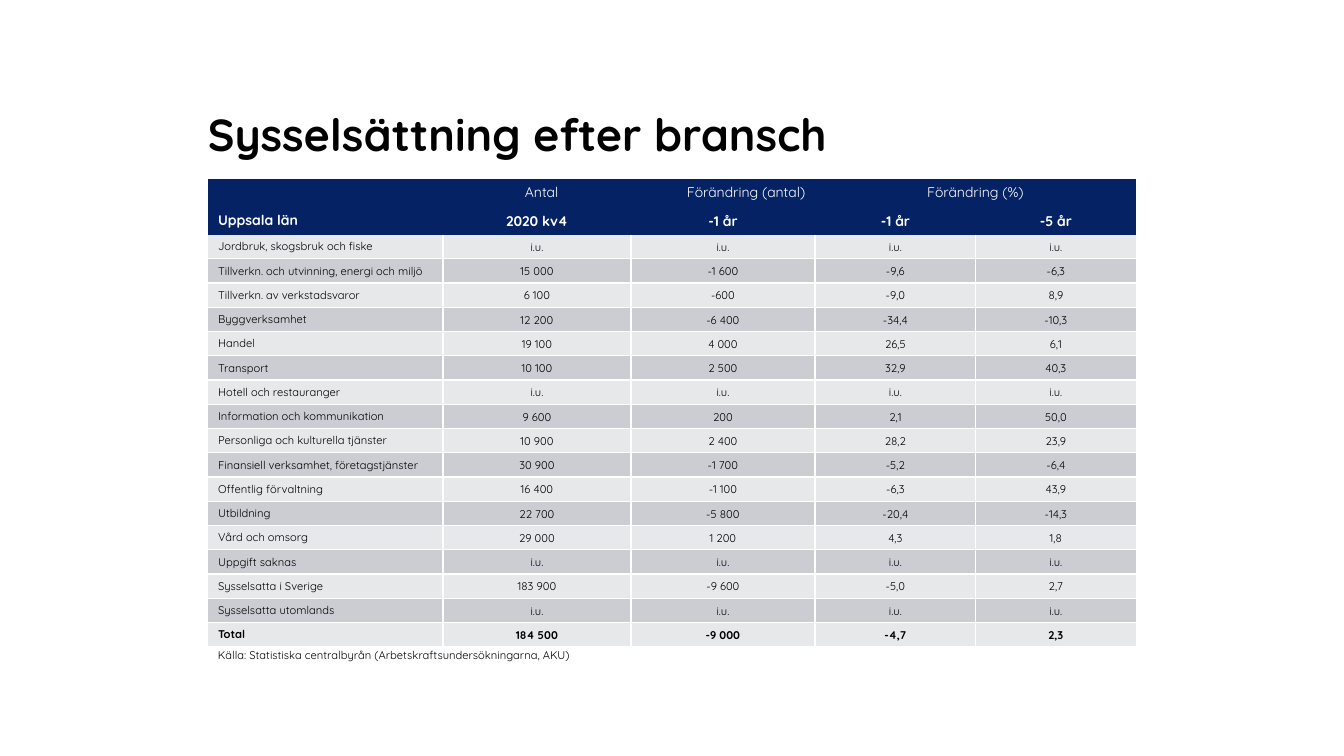
from lxml import etree
from pptx import Presentation
from pptx.dml.color import RGBColor
from pptx.enum.text import MSO_ANCHOR, MSO_AUTO_SIZE, PP_ALIGN
from pptx.oxml.ns import qn
from pptx.util import Emu, Pt

# Content
TITLE = "Sysselsättning efter bransch"
SOURCE = "Källa: Statistiska centralbyrån (Arbetskraftsundersökningarna, AKU)"
GROUPS = ["", "Antal\tFörändring (antal)", "", "Förändring (%)", ""]
HEADINGS = ["Uppsala län", "2020 kv4", "-1 år", "-1 år", "-5 år"]
MISSING = ["i.u."] * 4
BRANCHES = [
    ["Jordbruk, skogsbruk och fiske", *MISSING],
    ["Tillverkn. och utvinning, energi och miljö", "15 000", "-1 600", "-9,6", "-6,3"],
    ["Tillverkn. av verkstadsvaror", "6 100", "-600", "-9,0", "8,9"],
    ["Byggverksamhet", "12 200", "-6 400", "-34,4", "-10,3"],
    ["Handel", "19 100", "4 000", "26,5", "6,1"],
    ["Transport", "10 100", "2 500", "32,9", "40,3"],
    ["Hotell och restauranger", *MISSING],
    ["Information och kommunikation", "9 600", "200", "2,1", "50,0"],
    ["Personliga och kulturella tjänster", "10 900", "2 400", "28,2", "23,9"],
    ["Finansiell verksamhet, företagstjänster", "30 900", "-1 700", "-5,2", "-6,4"],
    ["Offentlig förvaltning", "16 400", "-1 100", "-6,3", "43,9"],
    ["Utbildning", "22 700", "-5 800", "-20,4", "-14,3"],
    ["Vård och omsorg", "29 000", "1 200", "4,3", "1,8"],
    ["Uppgift saknas", *MISSING],
    ["Sysselsatta i Sverige", "183 900", "-9 600", "-5,0", "2,7"],
    ["Sysselsatta utomlands", *MISSING],
    ["Total", "184 500", "-9 000", "-4,7", "2,3"],
]
ROWS = [GROUPS, HEADINGS, *BRANCHES]

# Look and layout, lengths in px
FONT = "Quicksand"
BLACK = RGBColor(0x00, 0x00, 0x00)
WHITE = RGBColor(0xFF, 0xFF, 0xFF)
NAVY = RGBColor(0x05, 0x23, 0x64)
BANDS = [RGBColor(0xE7, 0xE8, 0xEA), RGBColor(0xCC, 0xCD, 0xD3)]
LEFT, TABLE_TOP = 208, 179
COL_WIDTHS = [235, 188, 184, 161, 160]
HEADER_HEIGHTS = [27, 28]
BODY_HEIGHT = 412
GROUP_INSET, GROUP_TAB = 82, 162


def px(n):
    return Emu(round(n * 914400 / 100.8))


def style(p, size, color, bold=False):
    for r in p.runs:
        r.font.name = FONT
        r.font.size = Pt(size)
        r.font.bold = bold
        r.font.color.rgb = color
    if not p.runs:
        etree.SubElement(p._p, qn("a:endParaRPr"), sz=str(size * 100))


def set_borders(cell, visible):
    tcPr = cell._tc.get_or_add_tcPr()
    for side in "LRTB":
        ln = etree.SubElement(tcPr, qn(f"a:ln{side}"), w=str(Pt(1)))
        if side in visible:
            fill = etree.SubElement(ln, qn("a:solidFill"))
            etree.SubElement(fill, qn("a:srgbClr"), val=str(WHITE))
        else:
            etree.SubElement(ln, qn("a:noFill"))


def fill_cell(cell, row, col, text):
    header = row < 2
    visible = ""
    if not header:
        visible = "B" + ("T" if row > 2 else "") + ("L" if col > 0 else "")
        visible += "R" if col < len(COL_WIDTHS) - 1 else ""
    set_borders(cell, visible)
    cell.fill.solid()
    cell.fill.fore_color.rgb = NAVY if header else BANDS[row % 2]
    cell.text_frame.text = text
    p = cell.text_frame.paragraphs[0]
    if col > 0:
        p.alignment = PP_ALIGN.CENTER
        if row > 0:
            cell.vertical_anchor = MSO_ANCHOR.MIDDLE
            cell.margin_left = cell.margin_right = cell.margin_top = px(1)
            cell.margin_bottom = 0
    bold = row in (1, len(ROWS) - 1)
    style(p, 10 if header else 8, WHITE if header else BLACK, bold)


prs = Presentation()
prs.slide_width, prs.slide_height = px(1344), px(756)
slide = prs.slides.add_slide(prs.slide_layouts[5])

# Title
sp = slide.shapes.title
sp.left, sp.top, sp.width, sp.height = px(LEFT), px(37), px(929), px(124)
tf = sp.text_frame
tf.text = TITLE
tf.margin_left = tf.margin_right = tf.margin_top = tf.margin_bottom = 0
tf.vertical_anchor = MSO_ANCHOR.BOTTOM
tf.paragraphs[0].alignment = PP_ALIGN.LEFT
style(tf.paragraphs[0], 32, BLACK, True)

# Table
heights = HEADER_HEIGHTS + [BODY_HEIGHT / len(BRANCHES)] * len(BRANCHES)
table = slide.shapes.add_table(
    len(ROWS), len(COL_WIDTHS), px(LEFT), px(TABLE_TOP),
    px(sum(COL_WIDTHS)), px(sum(heights))).table
table.first_row = table.horz_banding = False
for column, width in zip(table.columns, COL_WIDTHS):
    column.width = px(width)
for i, (height, values) in enumerate(zip(heights, ROWS)):
    table.rows[i].height = px(height)
    for j, value in enumerate(values):
        fill_cell(table.cell(i, j), i, j, value)

# Group headings over two columns each
for j in (1, 3):
    table.cell(0, j).merge(table.cell(0, j + 1))
counts = table.cell(0, 1)
counts.margin_left = px(GROUP_INSET)
counts.margin_right = 0
p = counts.text_frame.paragraphs[0]
p.alignment = PP_ALIGN.LEFT
tabs = etree.SubElement(p._p.get_or_add_pPr(), qn("a:tabLst"))
etree.SubElement(tabs, qn("a:tab"), pos=str(px(GROUP_TAB)), algn="l")

# Source line
tf = slide.shapes.add_textbox(px(LEFT), px(643), px(383), px(24)).text_frame
tf.text = SOURCE
tf.word_wrap = False
tf.auto_size = MSO_AUTO_SIZE.SHAPE_TO_FIT_TEXT
style(tf.paragraphs[0], 8, BLACK)

prs.save("out.pptx")
